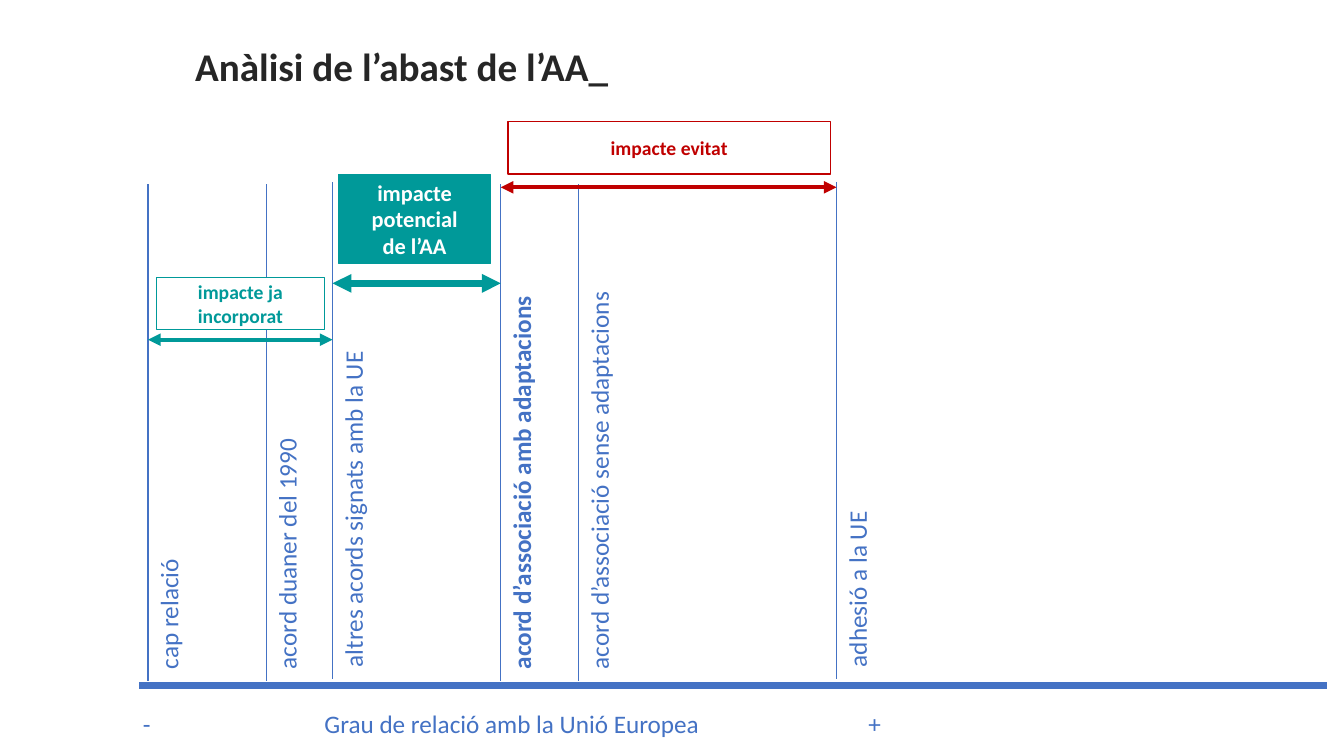
from lxml import etree
from pptx import Presentation
from pptx import util as u
from pptx.dml.color import RGBColor
from pptx.enum import shapes, text
from pptx.oxml.ns import qn

Cm, Pt = u.Cm, u.Pt
BLUE = RGBColor(0x44, 0x72, 0xC4)
TEAL = RGBColor(0x00, 0x99, 0x99)
RED = RGBColor(0xC0, 0x00, 0x00)
DARK = RGBColor(0x26, 0x26, 0x26)
WHITE = RGBColor(0xFF, 0xFF, 0xFF)
FONT = "Calibri"
MID, LEFT = text.PP_ALIGN.CENTER, text.PP_ALIGN.LEFT

# Content (lengths in cm)
TITLE = "Anàlisi de l’abast de l’AA_"
SCALE = ["-", "Grau de relació amb la Unió Europea", "+"]
# Stages: x, foot of the line, label length, bold, label
STAGES = [
    (3.73, 17.15, 10.7, False, "cap relació"),
    (6.71, 17.15, 10.7, False, "acord duaner del 1990"),
    (8.38, 17.1, 10.7, False, "altres acords signats amb la UE"),
    (12.62, 17.15, 11.76, True, "acord d’associació amb adaptacions"),
    (14.58, 17.15, 11.76, False, "acord d’associació sense adaptacions"),
    (21.08, 17.1, 10.7, False, "adhesió a la UE"),
]
# Spans: first stage, last stage, y, weight, colour
SPANS = [(0, 2, 8.56, 3, TEAL), (3, 5, 4.72, 3, RED), (2, 3, 7.14, 4.5, TEAL)]
# Impacts: left, top, width, height, fill, line, ink, size, paragraphs
IMPACTS = [
    (3.94, 6.99, 4.24, 1.32, WHITE, TEAL, TEAL, 14, ["impacte ja incorporat"]),
    (12.8, 3.07, 8.13, 1.32, WHITE, RED, RED, 14, ["impacte evitat"]),
    (8.53, 4.4, 3.84, 2.24, TEAL, TEAL, WHITE, 16,
     ["impacte potencial", "de l’AA"]),
]
RISE, LABEL_H, FOOT_GAP = 12.52, 1.02, 0.04

deck = Presentation()
deck.slide_width, deck.slide_height = Cm(33.87), Cm(19.05)
slide = deck.slides.add_slide(deck.slide_layouts[6])


def write(shape, lines, size, ink, bold=False, align=LEFT):
    frame = shape.text_frame
    frame.word_wrap = True
    frame.vertical_anchor = text.MSO_ANCHOR.MIDDLE
    for i, line in enumerate(lines):
        para = frame.add_paragraph() if i else frame.paragraphs[0]
        para.alignment = align
        run = para.add_run()
        run.text = line
        run.font.name, run.font.size = FONT, Pt(size)
        run.font.bold, run.font.color.rgb = bold, ink


def box(spot, fill, line):
    shape = slide.shapes.add_shape(
        shapes.MSO_SHAPE.RECTANGLE, *[Cm(n) for n in spot])
    shape.shadow.inherit = False
    shape.fill.solid()
    shape.fill.fore_color.rgb = fill
    shape.line.color.rgb = line
    shape.line.width = Pt(1)
    return shape


def rule(home, ends, ink, width, heads=False):
    line = home.shapes.add_connector(
        shapes.MSO_CONNECTOR.STRAIGHT, *[Cm(n) for n in ends])
    line.line.color.rgb = ink
    line.line.width = Pt(width)
    props = line._element.spPr
    if heads:
        for tag in ("a:headEnd", "a:tailEnd"):
            etree.SubElement(props.find(qn("a:ln")), qn(tag), type="triangle")
    etree.SubElement(props, qn("a:effectLst"))


# Title
write(box((4.67, 0.97, 28.98, 1.4), WHITE, WHITE), [TITLE], 28, DARK, True)

# Axis and its caption, spread with tab stops
rule(slide, (3.51, 17.27, 33.43, 17.27), BLUE, 4.5)
note = slide.shapes.add_textbox(Cm(3.35), Cm(17.42), Cm(19.23), Cm(1.63))
props = note.text_frame.paragraphs[0]._p.get_or_add_pPr()
tabs = etree.SubElement(props, qn("a:tabLst"))
for pos, kind in ((9.3, "ctr"), (18.6, "r")):
    etree.SubElement(tabs, qn("a:tab"), pos=str(Cm(pos)), algn=kind)
write(note, ["\t".join(SCALE)], 18, BLUE)

# Stages: upright line with a turned label standing on its foot
for x, foot, size, bold, name in STAGES:
    group = slide.shapes.add_group_shape()
    rule(group, (x, foot, x, foot - RISE), BLUE, 1)
    mid_x, mid_y = x + LABEL_H / 2, foot - FOOT_GAP - size / 2
    label = group.shapes.add_textbox(
        Cm(mid_x - size / 2), Cm(mid_y - LABEL_H / 2), Cm(size), Cm(LABEL_H))
    label.rotation = 270
    write(label, [name], 18, BLUE, bold)

# Spans between stages
for first, last, y, width, ink in SPANS:
    rule(slide, (STAGES[first][0], y, STAGES[last][0], y), ink, width, True)

# Impact boxes
for *spot, fill, line, ink, size, lines in IMPACTS:
    write(box(spot, fill, line), lines, size, ink, True, MID)

deck.save("out.pptx")
